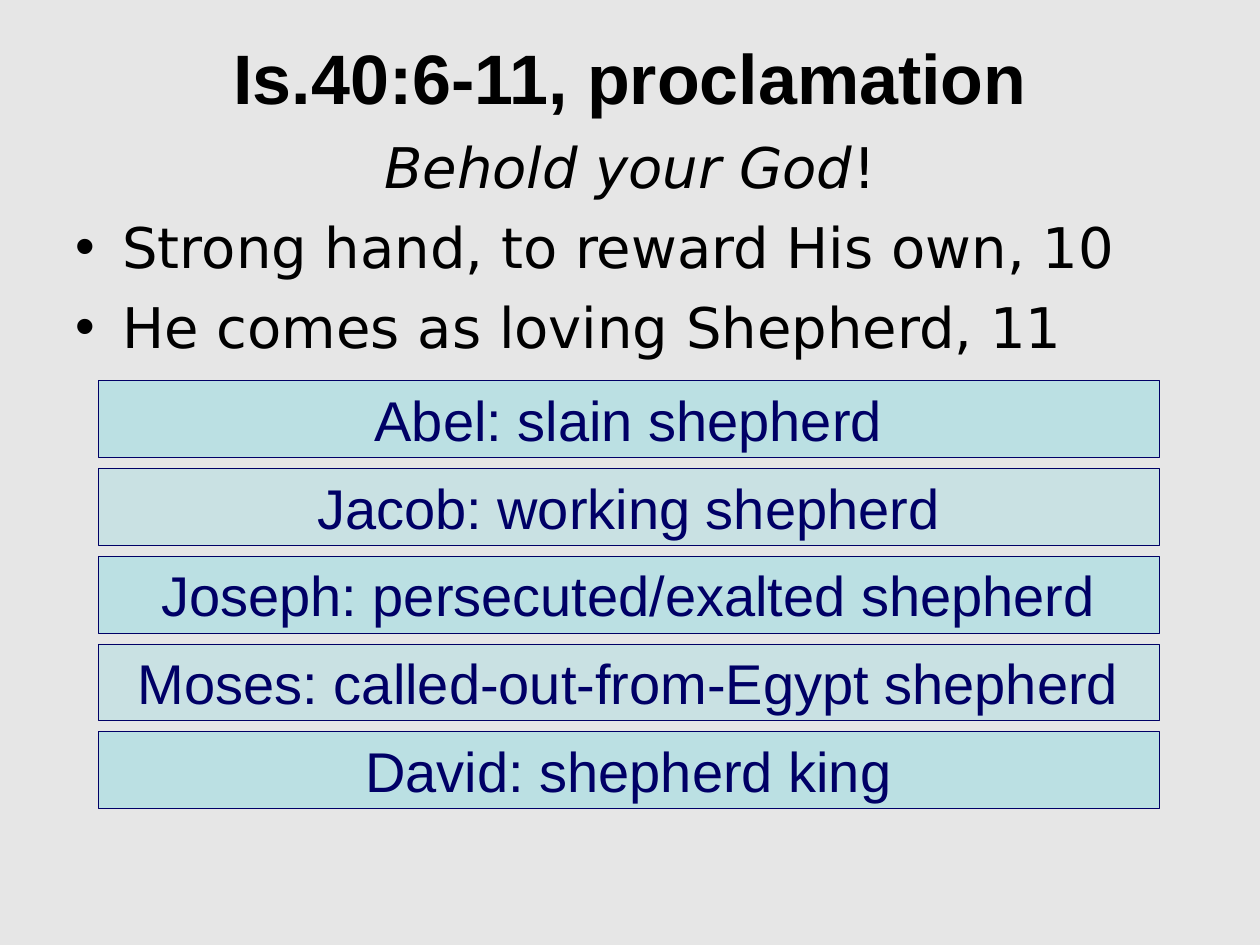
from lxml.etree import SubElement
from pptx import Presentation
from pptx.dml.color import RGBColor
from pptx.enum.shapes import MSO_SHAPE as SHAPE
from pptx.enum.text import MSO_ANCHOR as ANCHOR, PP_ALIGN as ALIGN
from pptx.oxml.ns import qn
from pptx.util import Cm, Pt

BLACK, NAVY, AQUA, GREY = "000000", "000066", "BBE0E3", "E6E6E6"
POINTS = ["Strong hand, to reward His own, 10", "He comes as loving Shepherd, 11"]
SHEPHERDS = [
    "Abel: slain shepherd",
    "Jacob: working shepherd",
    "Joseph: persecuted/exalted shepherd",
    "Moses: called-out-from-Egypt shepherd",
    "David: shepherd king",
]


def rgb(color):
    return RGBColor.from_string(color)


def format_runs(p, size, font, color):
    for r in p.runs:
        r.font.size = Pt(size)
        r.font.name = font
        r.font.color.rgb = rgb(color)


def add_bullet(p, indent):
    pPr = p._p.get_or_add_pPr()
    pPr.set("marL", str(indent))
    pPr.set("indent", str(-indent))
    SubElement(pPr, qn("a:buFont"), typeface="Arial")
    SubElement(pPr, qn("a:buChar"), char="•")


def set_alpha(fill_shape, percent):
    clr = fill_shape._element.spPr.find(qn("a:solidFill")).find(qn("a:srgbClr"))
    SubElement(clr, qn("a:alpha"), val=str(percent * 1000))


def place_title(slide, left, top, width, height):
    sp = slide.shapes.title
    sp.left, sp.top, sp.width, sp.height = left, top, width, height
    tf = sp.text_frame
    tf.text = "Is.40:6-11, proclamation"
    tf.vertical_anchor = ANCHOR.MIDDLE
    p = tf.paragraphs[0]
    p.alignment = ALIGN.CENTER
    format_runs(p, 40, "Arial", BLACK)
    p.runs[0].font.bold = True


def add_body(slide, left, top, width, height):
    tf = slide.shapes.add_textbox(left, top, width, height).text_frame
    tf.word_wrap = True

    # Centred quotation, only its words in italics
    p = tf.paragraphs[0]
    p.alignment = ALIGN.CENTER
    for text, italic in (("Behold your God", True), ("!", False)):
        r = p.add_run()
        r.text = text
        r.font.italic = italic

    # Bulleted points
    for text in POINTS:
        p = tf.add_paragraph()
        p.text = text
        add_bullet(p, Cm(0.95))

    for p in tf.paragraphs:
        p.space_before = Pt(7.5)
        format_runs(p, 32, "DejaVu Sans", BLACK)


def add_shepherds(slide, left, top, width, bar_height, step):
    for i, text in enumerate(SHEPHERDS):
        sp = slide.shapes.add_shape(
            SHAPE.RECTANGLE, left, top + i * step, width, bar_height)
        sp.shadow.inherit = False
        sp.fill.solid()
        sp.fill.fore_color.rgb = rgb(AQUA)
        if i % 2:  # every second bar is paler
            set_alpha(sp, 67)
        sp.line.color.rgb = rgb(NAVY)
        sp.line.width = Pt(0.25)
        tf = sp.text_frame
        tf.text = text
        tf.vertical_anchor = ANCHOR.MIDDLE
        p = tf.paragraphs[0]
        p.alignment = ALIGN.CENTER
        format_runs(p, 32, "Arial", NAVY)


def main():
    prs = Presentation()
    prs.slide_width, prs.slide_height = Cm(25.4), Cm(19.05)
    slide = prs.slides.add_slide(prs.slide_layouts[5])
    slide.background.fill.solid()
    slide.background.fill.fore_color.rgb = rgb(GREY)

    place_title(slide, Cm(1.27), Cm(0.43), Cm(22.86), Cm(2.21))
    add_body(slide, Cm(1.27), Cm(2.54), Cm(22.86), Cm(15.44))
    add_shepherds(slide, Cm(1.98), Cm(7.67), Cm(21.39), Cm(1.55), Cm(1.77))
    prs.save("out.pptx")


if __name__ == "__main__":
    main()
